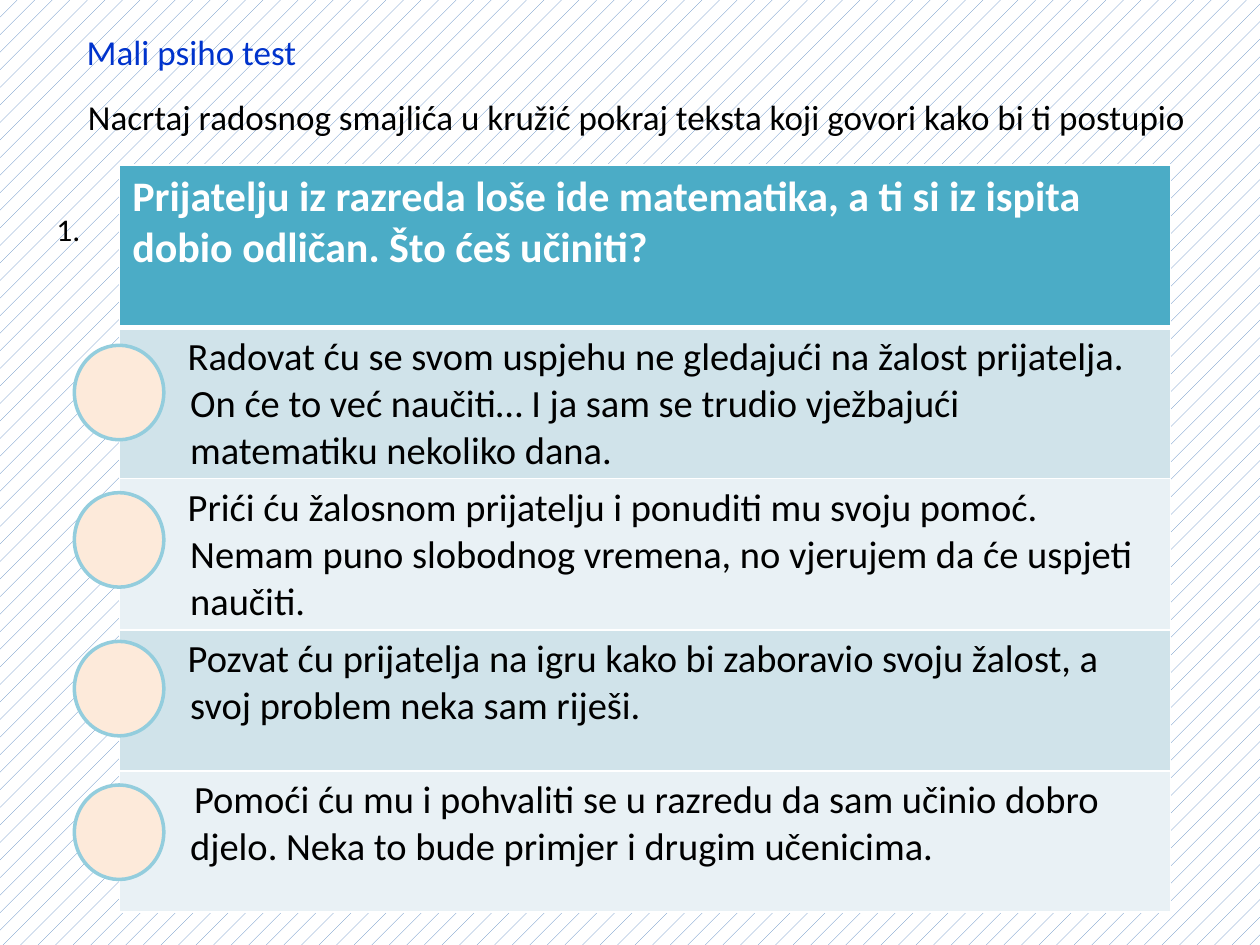
from lxml import etree
from pptx import Presentation
from pptx.dml.color import RGBColor
from pptx.enum.dml import MSO_PATTERN
from pptx.enum.shapes import MSO_SHAPE
from pptx.enum.text import MSO_AUTO_SIZE
from pptx.oxml.ns import qn
from pptx.util import Inches, Pt

DOTS = MSO_PATTERN.PERCENT_5
CIRCLE = MSO_SHAPE.FLOWCHART_CONNECTOR
FIT = MSO_AUTO_SIZE.SHAPE_TO_FIT_TEXT

QUESTION = ("Prijatelju iz razreda loše ide matematika, a ti si iz ispita "
            "dobio odličan. Što ćeš učiniti?")
# Lines, first-line indent, row height, top of the answer circle
ANSWERS = [
    (["Radovat ću se svom uspjehu ne gledajući na žalost prijatelja.",
      "On će to već naučiti… I ja sam se trudio vježbajući",
      "matematiku nekoliko dana."], -0.02, 1.2, 2.74),
    (["Prići ću žalosnom prijatelju i ponuditi mu svoju pomoć.",
      "Nemam puno slobodnog vremena, no vjerujem da će uspjeti",
      "naučiti."], -0.02, 1.2, 3.91),
    (["Pozvat ću prijatelja na igru kako bi zaboravio svoju žalost, a",
      "svoj problem neka sam riješi."], -0.02, 1.12, 5.09),
    (["Pomoći ću mu i pohvaliti se u razredu da sam učinio dobro",
      "djelo. Neka to bude primjer i drugim učenicima."], 0.03, 1.12, 6.23),
]
LABELS = [
    ("Nacrtaj radosnog smajlića u kružić pokraj teksta koji govori kako bi ti postupio",
     0.6, 0.71, 9.06, 0.44, 20, "000000"),
    ("Mali psiho test", 0.59, 0.19, 9.13, 0.44, 20, "0033CC"),
    ("1.", 0.35, 1.62, 0.47, 0.4, 18, "000000"),
]


def color(value):
    return RGBColor.from_string(value)


def style(para, size, value, bold=False):
    para.font.name = "Calibri"
    para.font.size = Pt(size)
    para.font.bold = bold
    para.font.color.rgb = color(value)


deck = Presentation()
deck.slide_width, deck.slide_height = Inches(10), Inches(7.5)
page = deck.slides.add_slide(deck.slide_layouts[6])
background = page.background.fill
background.patterned()
background.pattern = DOTS
background.fore_color.rgb = color("4F81BD")
background.back_color.rgb = color("FFFFFF")

for text, left, top, width, height, size, value in LABELS:
    box = page.shapes.add_textbox(Inches(left), Inches(top), Inches(width), Inches(height))
    box.text_frame.word_wrap = True
    box.text_frame.auto_size = FIT
    para = box.text_frame.paragraphs[0]
    para.text = text
    style(para, size, value)

# Question and answers
table = page.shapes.add_table(len(ANSWERS) + 1, 1, Inches(0.95), Inches(1.31),
                              Inches(8.34), Inches(5.93)).table
table.rows[0].height = Inches(1.29)
header = table.cell(0, 0)
header.text = QUESTION
style(header.text_frame.paragraphs[0], 24, "FFFFFF", bold=True)

for row, (lines, indent, height, _) in enumerate(ANSWERS, 1):
    table.rows[row].height = Inches(height)
    cell = table.cell(row, 0)
    cell.margin_bottom = Inches(0.03)
    cell.text = "\n".join(lines)
    for number, para in enumerate(cell.text_frame.paragraphs):
        properties = para._p.get_or_add_pPr()
        properties.set("marL", str(Inches(0.46)))
        properties.set("indent", str(Inches(0 if number else indent)))
        style(para, 22, "000000")

# White cell borders, thicker between question and answers
for row in range(len(ANSWERS) + 1):
    cell = table.cell(row, 0)
    cell_properties = cell._tc.get_or_add_tcPr()
    for side in ("lnL", "lnR", "lnT", "lnB"):
        thick = (row, side) in ((0, "lnB"), (1, "lnT"))
        line = etree.SubElement(cell_properties, qn("a:" + side), w=str(Pt(3 if thick else 1)))
        solid = etree.SubElement(line, qn("a:solidFill"))
        etree.SubElement(solid, qn("a:srgbClr"), val="FFFFFF")
    cell.fill.solid()
    band = "D0E3EA" if row % 2 else "E9F1F5"
    cell.fill.fore_color.rgb = color(band if row else "4BACC6")

# Circles for the smileys
for *_, top in ANSWERS:
    circle = page.shapes.add_shape(CIRCLE, Inches(0.59), Inches(top), Inches(0.71), Inches(0.75))
    circle.shadow.inherit = False
    circle.fill.solid()
    circle.fill.fore_color.rgb = color("FDEADA")
    circle.line.color.rgb = color("93CDDD")
    circle.line.width = Pt(2)

deck.save("out.pptx")
